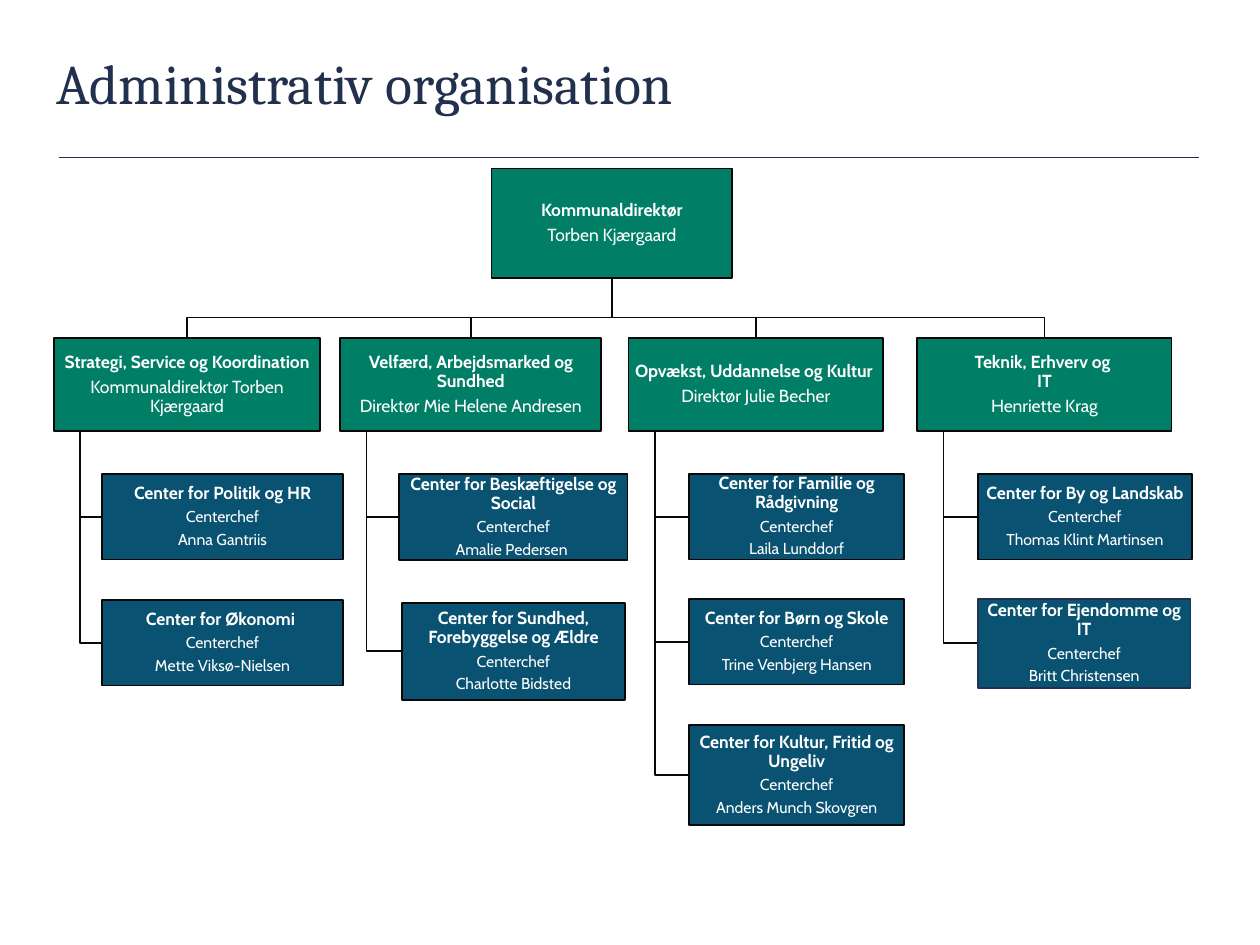
from pptx import Presentation
from pptx.dml.color import RGBColor
from pptx.enum.shapes import MSO_CONNECTOR, MSO_SHAPE
from pptx.enum.text import MSO_ANCHOR, PP_ALIGN
from pptx.oxml.ns import qn
from pptx.util import Cm, Pt
from lxml.etree import SubElement

HUES = {"navy": "21314D", "green": "007F66", "blue": "0A5271",
        "edge": "080808", "white": "FFFFFF"}

# Shared levels of the chart, in cm
BOSS = (9.91, 3.4, 4.85, 2.21)
BUS = 6.4
UNIT_TOP, UNIT_HIGH = 6.81, 1.88
INDENT = 0.53

# Units: left, width, lines, centers (left, top, width, height, name, head)
UNITS = [
    (1.09, 5.36, ["Strategi, Service og Koordination",
                  "Kommunaldirektør Torben Kjærgaard"], [
        (2.06, 9.55, 4.85, 1.73, "Center for Politik og HR", "Anna Gantriis"),
        (2.06, 12.09, 4.85, 1.73, "Center for Økonomi ", "Mette Viksø-Nielsen"),
    ]),
    (6.86, 5.26, ["Velfærd, Arbejdsmarked og Sundhed",
                  "Direktør Mie Helene Andresen"], [
        (8.05, 9.56, 4.6, 1.73, "Center for Beskæftigelse og Social",
         "Amalie Pedersen "),
        (8.1, 12.15, 4.5, 1.96, "Center for Sundhed, Forebyggelse og Ældre",
         "Charlotte Bidsted"),
    ]),
    (12.67, 5.13, ["Opvækst, Uddannelse og Kultur ", "Direktør Julie Becher"], [
        (13.89, 9.55, 4.34, 1.73, "Center for Familie og Rådgivning",
         "Laila Lunddorf"),
        (13.89, 12.07, 4.34, 1.73, "Center for Børn og Skole",
         "Trine Venbjerg Hansen"),
        (13.89, 14.61, 4.34, 2.03, "Center for Kultur, Fritid og Ungeliv",
         "Anders Munch Skovgren"),
    ]),
    (18.49, 5.13, ["Teknik, Erhverv og \vIT", "Henriette Krag"], [
        (19.71, 9.55, 4.32, 1.73, "Center for By og Landskab",
         "Thomas Klint Martinsen"),
        (19.71, 12.07, 4.29, 1.8, "Center for Ejendomme og IT",
         "Britt Christensen"),
    ]),
]


class Chart:
    def __init__(self, slide):
        self.shapes = slide.shapes
        self.face = "Cabin"

    def hue(self, name):
        return RGBColor.from_string(HUES[name])

    def title(self, text, *area):
        frame = self.shapes.add_textbox(*map(Cm, area)).text_frame
        frame.word_wrap = True
        self.inset(frame, 0)
        para = frame.paragraphs[0]
        para.text = text
        self.style(para, "Cambria", 32, "navy")

    def rule(self, left, right, top):
        line = self.shapes.add_connector(
            MSO_CONNECTOR.STRAIGHT, Cm(left), Cm(top), Cm(right), Cm(top))
        line.line.color.rgb = self.hue("navy")
        line.line.width = Pt(0.75)
        SubElement(line._element.spPr, qn("a:effectLst"))

    def elbow(self, *spots):
        spots = [(Cm(x), Cm(y)) for x, y in spots]
        pen = self.shapes.build_freeform(*spots[0])
        pen.add_line_segments(spots[1:], close=False)
        shape = pen.convert_to_shape()
        shape.fill.background()
        self.edge(shape, "edge")

    def box(self, area, lines, fill, sizes, edge="edge"):
        shape = self.shapes.add_shape(MSO_SHAPE.RECTANGLE, *map(Cm, area))
        shape.fill.solid()
        shape.fill.fore_color.rgb = self.hue(fill)
        self.edge(shape, edge)
        frame = shape.text_frame
        frame.word_wrap = True
        frame.vertical_anchor = MSO_ANCHOR.MIDDLE
        self.inset(frame, 0.03)
        for i, (text, size) in enumerate(zip(lines, sizes)):
            para = frame.add_paragraph() if i else frame.paragraphs[0]
            para.text = text
            para.alignment = PP_ALIGN.CENTER
            para.line_spacing = 0.9
            para.space_after = Pt(0.35 * size)
            self.style(para, self.face, size, "white", i == 0)

    def edge(self, shape, name):
        shape.line.color.rgb = self.hue(name)
        shape.line.width = Pt(1)
        shape.shadow.inherit = False

    def inset(self, frame, gap):
        frame.margin_left = frame.margin_right = Cm(gap)
        frame.margin_top = frame.margin_bottom = Cm(gap)

    def style(self, para, face, size, name, bold=False):
        font = para.font
        font.name, font.size, font.bold = face, Pt(size), bold
        font.color.rgb = self.hue(name)


def main():
    deck = Presentation()
    deck.slide_width, deck.slide_height = Cm(25.4), Cm(19.05)
    chart = Chart(deck.slides.add_slide(deck.slide_layouts[6]))

    # Heading
    chart.rule(1.19, 24.18, 3.18)
    chart.title("Administrativ organisation", 1.14, 0.97, 23.04, 2.16)

    # Lines, behind the boxes
    mid, foot = BOSS[0] + BOSS[2] / 2, BOSS[1] + BOSS[3]
    for left, width, _, centers in UNITS:
        goal = left + width / 2
        chart.elbow((mid, foot), (mid, BUS), (goal, BUS), (goal, UNIT_TOP))
        trunk = left + INDENT
        for x, y, _, high, *_ in centers:
            half = y + high / 2
            chart.elbow((trunk, UNIT_TOP + UNIT_HIGH), (trunk, half), (x, half))

    # Director, units and centers
    chart.box(BOSS, ["Kommunaldirektør", "Torben Kjærgaard"], "green", (10, 10))
    for left, width, lines, centers in UNITS:
        chart.box((left, UNIT_TOP, width, UNIT_HIGH), lines, "green", (10, 10))
        for *area, name, head in centers:
            edge = "navy" if "Ejendomme" in name else "edge"
            chart.box(area, [name, "Centerchef", head], "blue", (10, 9, 9), edge)

    deck.save("out.pptx")


if __name__ == "__main__":
    main()
